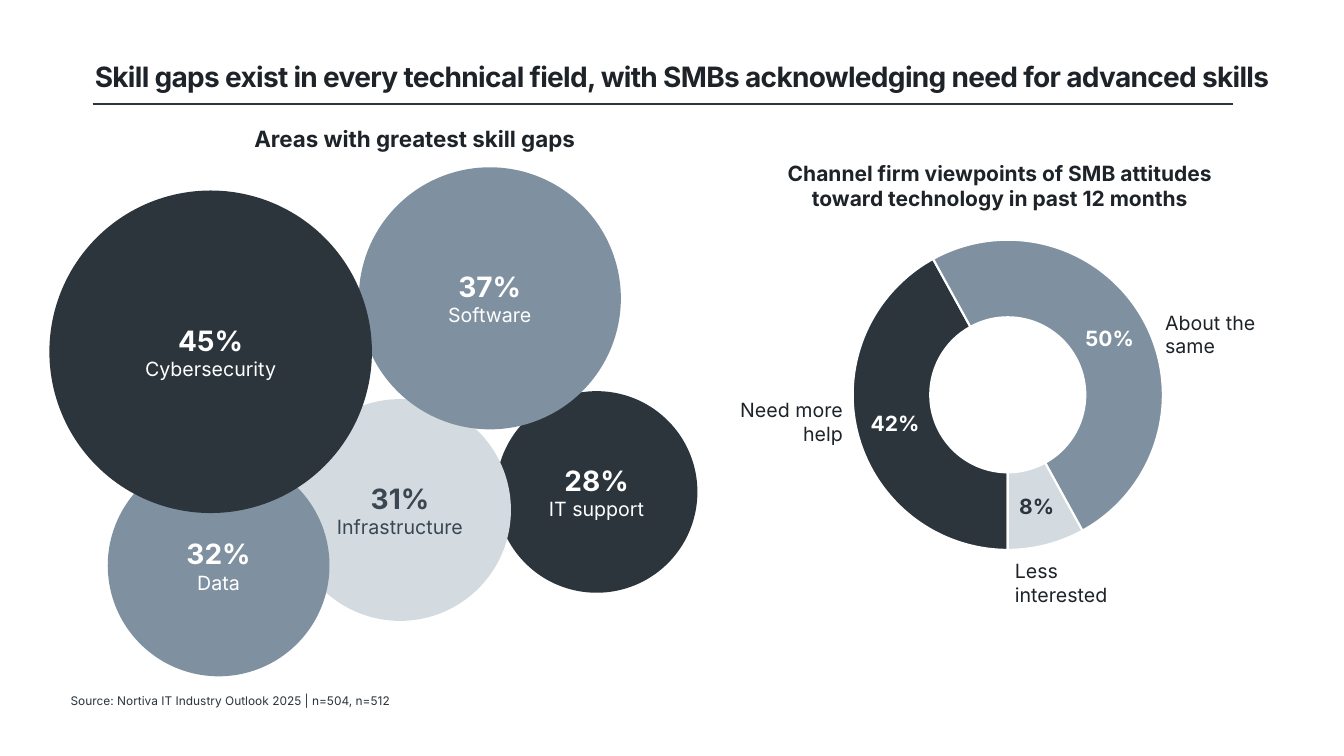
from lxml import etree
from pptx import Presentation
from pptx.chart.data import CategoryChartData
from pptx.dml.color import RGBColor
from pptx.enum.chart import XL_CHART_TYPE
from pptx.enum.shapes import MSO_CONNECTOR, MSO_SHAPE
from pptx.enum.text import MSO_ANCHOR, MSO_AUTO_SIZE, PP_ALIGN
from pptx.oxml.ns import qn
from pptx.util import Pt

LEFT, MID, RIGHT = PP_ALIGN.LEFT, PP_ALIGN.CENTER, PP_ALIGN.RIGHT
CENTER, TOP = MSO_ANCHOR.MIDDLE, MSO_ANCHOR.TOP
GROW, FIXED = MSO_AUTO_SIZE.SHAPE_TO_FIT_TEXT, MSO_AUTO_SIZE.NONE
OVAL, LINE, RING = MSO_SHAPE.OVAL, MSO_CONNECTOR.STRAIGHT, XL_CHART_TYPE.DOUGHNUT

HUES = {"ink": "1D2328", "dark": "2C353C", "slate": "7F91A1", "pale": "D3DBE0",
        "gray": "3A4650", "white": "FFFFFF", "axis": "586169"}
TITLE = "Skill gaps exist in every technical field, with SMBs acknowledging need for advanced skills"
TITLE_BOX = (60.5, 31, 856.8, 50.4)
RULE = (66.2, 74.2, 880.6, 74.2)

GAPS = [
    ("28%", "IT support", 354.2, 279.4, 144, "dark", "white"),
    ("31%", "Infrastructure", 206.6, 285.1, 158.4, "pale", "gray"),
    ("32%", "Data", 77, 324.7, 158.4, "slate", "white"),
    ("37%", "Software", 256.3, 119.5, 187.2, "slate", "white"),
    ("45%", "Cybersecurity", 35.3, 136.1, 230.4, "dark", "white"),
]
VIEWS = [("Need more help", 0.42, "dark", "white"),
         ("About the same", 0.5, "slate", "white"),
         ("Less interested", 0.08, "pale", "dark")]
CHART_BOX = (542.2, 157, 355, 259.2)
PLOT = {"layoutTarget": "inner", "xMode": "edge", "yMode": "edge",
        "x": 0.188, "y": 0.055, "w": 0.625, "h": 0.855}
SPOTS = [(509.8, 280.8, RIGHT), (825.1, 218.2, LEFT), (717.8, 396, LEFT)]
HEADS = [
    ("Areas with greatest skill gaps", (100.1, 85.7, 392.4, 26.6), 16),
    ("Channel firm viewpoints of SMB attitudes toward technology in past 12 months",
     (553.7, 110.9, 321.1, 43.9), 15),
]
SOURCE = "Source: Nortiva IT Industry Outlook 2025 | n=504, n=512"
SOURCE_BOX = (50.4, 493.2, 504, 14.4)


def rgb(hue):
    return RGBColor.from_string(HUES[hue])


def apply(obj, form):
    for key, val in form.items():
        setattr(obj, key, val)


def style(font, size, hue, bold=False, name="Inter"):
    apply(font, {"name": name, "size": Pt(size), "bold": bold})
    font.color.rgb = rgb(hue)


def write(par, text, size, hue, bold=False, align=LEFT):
    par.alignment = align
    run = par.add_run()
    run.text = text
    style(run.font, size, hue, bold)
    return run


def place(box):
    return [Pt(n) for n in box]


def label(slide, text, box, size, hue="ink", bold=False, align=LEFT, form=None):
    frame = slide.shapes.add_textbox(*place(box)).text_frame
    apply(frame, {"word_wrap": True, "auto_size": GROW, "vertical_anchor": TOP, **(form or {})})
    write(frame.paragraphs[0], text, size, hue, bold, align)


def head(slide):
    title = slide.shapes.title
    apply(title, dict(zip(("left", "top", "width", "height"), place(TITLE_BOX))))
    frame = title.text_frame
    apply(frame, {"word_wrap": True, "auto_size": FIXED, "vertical_anchor": CENTER})
    par = frame.paragraphs[0]
    par.line_spacing = 0.9
    run = write(par, TITLE, 20, "ink", True)
    run.font._element.set("spc", "-50")
    rule = slide.shapes.add_connector(LINE, *place(RULE))
    rule.line.color.rgb = rgb("dark")
    rule.line.width = Pt(1)
    etree.SubElement(rule._element.spPr, qn("a:effectLst"))


def bubble(slide, share, area, left, top, size, fill, hue):
    disc = slide.shapes.add_shape(OVAL, *place((left, top, size, size)))
    disc.shadow.inherit = False
    disc.fill.solid()
    disc.fill.fore_color.rgb = rgb(fill)
    disc.line.fill.background()
    frame = disc.text_frame
    apply(frame, {"word_wrap": True, "vertical_anchor": CENTER})
    write(frame.paragraphs[0], share, 20, hue, True, MID)
    write(frame.add_paragraph(), area, 14, hue, False, MID)


def donut(slide):
    data = CategoryChartData(number_format="0%")
    data.categories = [view[0] for view in VIEWS]
    data.add_series("Share", [view[1] for view in VIEWS])
    chart = slide.shapes.add_chart(RING, *place(CHART_BOX), data).chart
    apply(chart, {"has_title": False, "has_legend": False})
    style(chart.font, 11, "axis", name="Roboto")
    plot = chart.plots[0]
    apply(plot, {"vary_by_categories": False, "has_data_labels": True})
    tags = plot.data_labels
    apply(tags, {"show_value": True, "show_percentage": False,
                 "number_format": "0%", "number_format_is_linked": False})
    style(tags.font, 15, "white", True)
    for i, (_, _, fill, hue) in enumerate(VIEWS):
        point = plot.series[0].points[i]
        point.format.fill.solid()
        point.format.fill.fore_color.rgb = rgb(fill)
        point.format.line.color.rgb = rgb("white")
        point.format.line.width = Pt(1.5)
        style(point.data_label.font, 15, hue, True)
    ring = plot._element
    ring.find(qn("c:firstSliceAng")).set("val", "180")
    ring.find(qn("c:holeSize")).set("val", "54")
    area = ring.getparent()
    for old in area.findall(qn("c:layout")):
        area.remove(old)
    lay = etree.Element(qn("c:layout"))
    spot = etree.SubElement(lay, qn("c:manualLayout"))
    for key, val in PLOT.items():
        etree.SubElement(spot, qn("c:" + key)).set("val", str(val))
    area.insert(0, lay)


def main():
    deck = Presentation()
    apply(deck, {"slide_width": Pt(960), "slide_height": Pt(540)})
    slide = deck.slides.add_slide(deck.slide_layouts[5])
    head(slide)
    for gap in GAPS:
        bubble(slide, *gap)
    donut(slide)
    for text, box, size in HEADS:
        label(slide, text, box, size, bold=True, align=MID)
    for view, (left, top, align) in zip(VIEWS, SPOTS):
        label(slide, view[0], (left, top, 99.4, 41), 14, align=align)
    flat = dict.fromkeys(("margin_left", "margin_top", "margin_right", "margin_bottom"), 0)
    label(slide, SOURCE, SOURCE_BOX, 8.5, "dark",
          form={**flat, "auto_size": FIXED, "vertical_anchor": CENTER})
    deck.save("out.pptx")


if __name__ == "__main__":
    main()
